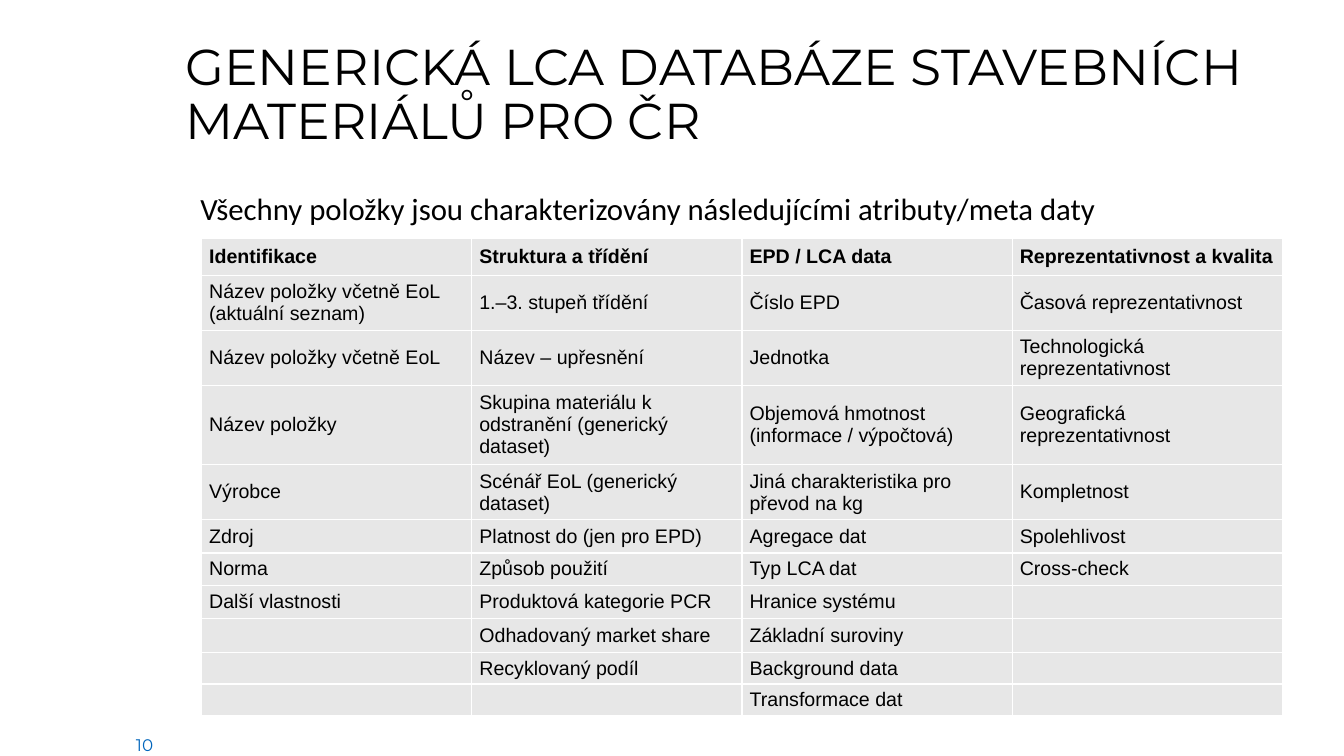
from dataclasses import dataclass

from lxml import etree
from pptx import Presentation
from pptx.dml.color import RGBColor
from pptx.enum import text
from pptx.oxml import ns
from pptx.util import Cm, Pt

BLACK = RGBColor(0x00, 0x00, 0x00)
WHITE = RGBColor(0xFF, 0xFF, 0xFF)
GREY = RGBColor(0xE7, 0xE7, 0xE7)
BLUE = RGBColor(0x00, 0x65, 0xBC)

CELL_SIZE = 14
COLUMN_WIDTH = 6.81
ROW_HEIGHTS = [0.94, 1.39, 1.39, 1.99, 1.39, 0.84, 0.81, 0.84, 0.85, 0.8, 0.8]
COLUMNS = [
    ["Identifikace", "Název položky včetně EoL (aktuální seznam)",
     "Název položky včetně EoL", "Název položky", "Výrobce", "Zdroj", "Norma",
     "Další vlastnosti"],
    ["Struktura a třídění", "1.–3. stupeň třídění", "Název – upřesnění",
     "Skupina materiálu k odstranění (generický dataset)",
     "Scénář EoL (generický dataset)", "Platnost do (jen pro EPD)",
     "Způsob použití", "Produktová kategorie PCR", "Odhadovaný market share",
     "Recyklovaný podíl"],
    ["EPD / LCA data", "Číslo EPD", "Jednotka",
     "Objemová hmotnost (informace / výpočtová)",
     "Jiná charakteristika pro převod na kg", "Agregace dat", "Typ LCA dat",
     "Hranice systému", "Základní suroviny", "Background data",
     "Transformace dat"],
    ["Reprezentativnost a kvalita", "Časová reprezentativnost",
     "Technologická reprezentativnost", "Geografická reprezentativnost",
     "Kompletnost", "Spolehlivost", "Cross-check"],
]


@dataclass
class Label:
    words: str
    left: float
    top: float
    width: float
    height: float
    font: str
    size: int
    color: RGBColor = BLACK
    anchor: text.MSO_ANCHOR = text.MSO_ANCHOR.TOP
    align: text.PP_ALIGN = text.PP_ALIGN.LEFT
    line_spacing: float = 1.0
    space_after: int = 0


LABELS = [
    Label("10", 0.91, 18.39, 3.2, 0.76, "Montserrat", 12, BLUE,
          text.MSO_ANCHOR.MIDDLE, text.PP_ALIGN.RIGHT),
    Label("GENERICKÁ LCA DATABÁZE STAVEBNÍCH MATERIÁLŮ PRO ČR",
          4.42, 0.69, 28.83, 3.23, "Montserrat", 36,
          anchor=text.MSO_ANCHOR.BOTTOM, line_spacing=0.9),
    Label("Všechny položky jsou charakterizovány následujícími atributy/meta daty",
          4.8, 4.65, 27.48, 12.98, "Calibri", 22, space_after=6),
]


def style_run(r, font: str, size: int, color: RGBColor, bold: bool = False) -> None:
    r.font.name = font
    r.font.size = Pt(size)
    r.font.color.rgb = color
    r.font.bold = bold


def add_label(s, label: Label) -> None:
    box = s.shapes.add_textbox(Cm(label.left), Cm(label.top),
                               Cm(label.width), Cm(label.height))
    tf = box.text_frame
    tf.word_wrap = True
    tf.vertical_anchor = label.anchor
    tf.text = label.words
    p = tf.paragraphs[0]
    p.alignment = label.align
    p.line_spacing = label.line_spacing
    p.space_after = Pt(label.space_after)
    style_run(p.runs[0], label.font, label.size, label.color)


def add_borders(cell) -> None:
    tc_pr = cell._tc.get_or_add_tcPr()
    for side in ("a:lnL", "a:lnR", "a:lnT", "a:lnB"):
        line = etree.SubElement(tc_pr, ns.qn(side), w=str(Pt(1)))
        fill = etree.SubElement(line, ns.qn("a:solidFill"))
        etree.SubElement(fill, ns.qn("a:srgbClr"), val=str(WHITE))


def fill_cell(cell, words: str, bold: bool) -> None:
    add_borders(cell)
    cell.fill.solid()
    cell.fill.fore_color.rgb = GREY
    cell.vertical_anchor = text.MSO_ANCHOR.MIDDLE
    cell.margin_left = cell.margin_right = Cm(0.19)
    cell.margin_top = cell.margin_bottom = Cm(0.1)
    p = cell.text_frame.paragraphs[0]
    if words:
        p.text = words
        style_run(p.runs[0], "Arial", CELL_SIZE, BLACK, bold)
    else:
        etree.SubElement(p._p, ns.qn("a:endParaRPr"), sz=str(CELL_SIZE * 100))


def add_attribute_table(s) -> None:
    frame = s.shapes.add_table(len(ROW_HEIGHTS), len(COLUMNS), Cm(5.08), Cm(6),
                               Cm(COLUMN_WIDTH * len(COLUMNS)),
                               Cm(sum(ROW_HEIGHTS)))
    table = frame.table
    table.horz_banding = False
    for row, height in zip(table.rows, ROW_HEIGHTS):
        row.height = Cm(height)
    for j, entries in enumerate(COLUMNS):
        table.columns[j].width = Cm(COLUMN_WIDTH)
        for i in range(len(ROW_HEIGHTS)):
            words = entries[i] if i < len(entries) else ""
            fill_cell(table.cell(i, j), words, bold=i == 0)


def main() -> None:
    prs = Presentation()
    prs.slide_width = Cm(33.87)
    prs.slide_height = Cm(19.05)
    s = prs.slides.add_slide(prs.slide_layouts[6])
    for label in LABELS:
        add_label(s, label)
    add_attribute_table(s)
    prs.save("out.pptx")


if __name__ == "__main__":
    main()
